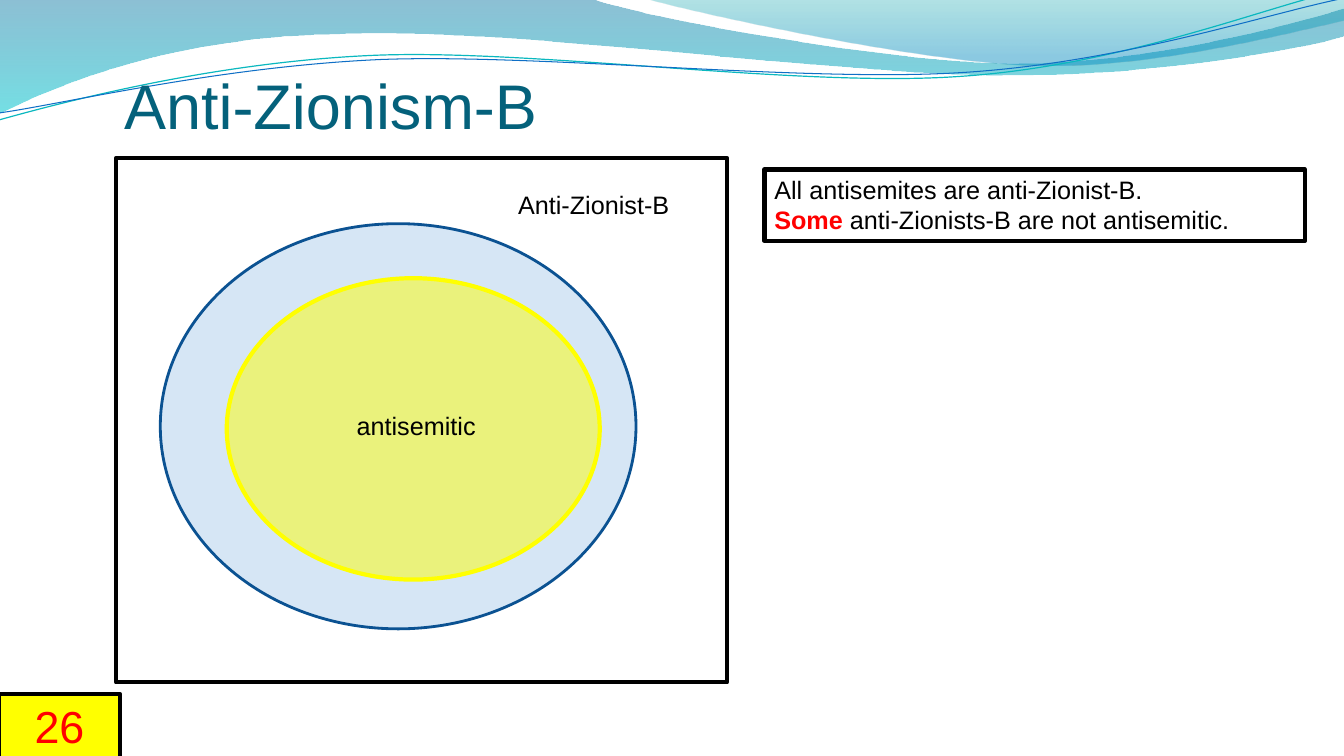
from itertools import islice
from math import cos, radians, sin
from lxml.etree import Element, SubElement
from pptx import Presentation
from pptx.dml.color import RGBColor
from pptx.enum.shapes import MSO_SHAPE as Preset
from pptx.enum.text import MSO_ANCHOR as Anchor, MSO_AUTO_SIZE as AutoSize, PP_ALIGN as Align
from pptx.oxml.ns import qn
from pptx.util import Pt

COLORS = {
    "black": "000000", "red": "FF0000", "yellow": "FFFF00", "title": "04617B",
    "blue": "0F6FC6", "dark_blue": "0B5292", "teal": "0AB8BF",
    "wave_blue": "0074A1", "wave_cyan": "00C6CF",
    "crest_teal": "00A1A9", "crest_blue": "008BBF",
}
STRAND_TILT = 2.7

WAVE = [
    [(0, 0)], [(422.6, -0.7)],
    [(456.5, 12.2), (637.2, 45.4), (727.9, 45.4)],
    [(819.4, 45.4), (920.2, 18.7), (959.8, 6.5)],
    [(961.2, 25.9)],
    [(943.9, 31.7), (835.2, 54.7), (715.7, 54)],
    [(596.9, 54), (366.5, 20.2), (247, 24.5)],
    [(123.8, 25.9), (43.9, 59.8), (-0.7, 81.4)],
    [(0, 0)],
]
CREST = [
    [(460.1, -0.7)],
    [(488.9, 7.9), (654.5, 44.6), (738, 46.8)],
    [(821.5, 49.7), (923, 23), (959.8, 15.1)],
    [(959.8, 0)],
    [(460.1, -0.7)],
]
TEAL_STRAND = [
    [(-0.7, 85.7)],
    [(46.1, 72.7), (151.9, 44.6), (265.7, 39.6)],
    [(379.4, 34.6), (568.8, 62.6), (684, 54.7)],
    [(799.2, 47.5), (901.4, 5.8), (958.3, -7.2)],
]
BLUE_STRAND = [
    [(0, 80.6)],
    [(45.4, 74.2), (157, 47.5), (272.2, 42.5)],
    [(386.6, 38.2), (573.1, 59), (687.6, 51.8)],
    [(802.8, 44.6), (903.6, 10.1), (960.5, -1.4)],
]


def rgb(name):
    return RGBColor.from_string(COLORS[name])


def set_attributes(target, values):
    for name, value in values.items():
        setattr(target, name, value)


def set_opacity(shape, percents):
    colors = list(shape.element.spPr.iter(qn("a:srgbClr")))
    for color, percent in zip(colors, percents):
        SubElement(color, qn("a:alpha"), val=str(percent * 1000))


def set_line(shape, color, width):
    shape.line.color.rgb = rgb(color)
    shape.line.width = Pt(width)


def turn(point, center, degrees):
    x, y = point[0] - center[0], point[1] - center[1]
    cosine, sine = cos(radians(degrees)), sin(radians(degrees))
    return center[0] + x * cosine - y * sine, center[1] + x * sine + y * cosine


def bend_curves(shape, segments):
    outline = next(shape.element.spPr.iter(qn("a:path")))
    lines = iter(outline.findall(qn("a:lnTo")))
    for segment in segments[1:]:
        pieces = list(islice(lines, len(segment)))
        if len(segment) == 3:
            curve = Element(qn("a:cubicBezTo"))
            pieces[0].addprevious(curve)
            for piece in pieces:
                curve.append(piece[0])
                outline.remove(piece)


def add_outline(slide, segments, close):
    start, *rest = [(Pt(x), Pt(y)) for segment in segments for x, y in segment]
    builder = slide.shapes.build_freeform(*start)
    builder.add_line_segments(rest, close=close)
    shape = builder.convert_to_shape()
    shape.shadow.inherit = False
    bend_curves(shape, segments)
    return shape


def add_wave(slide, segments, stops):
    shape = add_outline(slide, segments, True)
    shape.fill.gradient()
    shape.fill.gradient_angle = 270
    for stop, (position, color, _) in zip(shape.fill.gradient_stops, stops):
        stop.position = position
        stop.color.rgb = rgb(color)
    set_opacity(shape, [opacity for _, _, opacity in stops])
    shape.line.fill.background()


def add_strand(slide, segments, center, color, width):
    level = [[turn(point, center, STRAND_TILT) for point in segment] for segment in segments]
    shape = add_outline(slide, level, False)
    shape.rotation = 360 - STRAND_TILT
    shape.fill.background()
    set_line(shape, color, width)


def add_figure(slide, preset, box, line, width, fill=None, opacity=100):
    shape = slide.shapes.add_shape(preset, *map(Pt, box))
    shape.shadow.inherit = False
    if fill:
        shape.fill.solid()
        shape.fill.fore_color.rgb = rgb(fill)
        if opacity < 100:
            set_opacity(shape, [opacity])
    else:
        shape.fill.background()
    set_line(shape, line, width)
    return shape


def write(shape, paragraphs, size, align=Align.LEFT, **frame_values):
    frame = shape.text_frame
    set_attributes(frame, {"word_wrap": True, "vertical_anchor": Anchor.TOP,
                           "auto_size": AutoSize.SHAPE_TO_FIT_TEXT, **frame_values})
    for index, runs in enumerate(paragraphs):
        paragraph = frame.add_paragraph() if index else frame.paragraphs[0]
        paragraph.alignment = align
        for text, color, bold in runs:
            run = paragraph.add_run()
            run.text = text
            set_attributes(run.font, {"name": "Arial", "size": Pt(size), "bold": bold})
            run.font.color.rgb = rgb(color)


def add_label(slide, text, box):
    write(slide.shapes.add_textbox(*map(Pt, box)), [[(text, "black", False)]], 18)


def add_title(slide, text):
    title = slide.shapes.title
    title.element.getparent().append(title.element)
    set_attributes(title, {"left": Pt(88.6), "top": Pt(44.6), "width": Pt(616.3), "height": Pt(56.9)})
    write(title, [[(text, "title", False)]], 45, vertical_anchor=Anchor.BOTTOM,
          auto_size=AutoSize.NONE, margin_left=0, margin_right=0,
          margin_top=Pt(3.6), margin_bottom=0)


def main():
    presentation = Presentation()
    set_attributes(presentation, {"slide_width": Pt(960), "slide_height": Pt(540)})
    slide = presentation.slides.add_slide(presentation.slide_layouts[5])

    add_wave(slide, WAVE, [(0, "wave_blue", 45), (1, "wave_cyan", 55)])
    add_wave(slide, CREST, [(0, "crest_teal", 30), (0.8, "crest_blue", 45)])
    add_strand(slide, TEAL_STRAND, (478.8, 41.4), "teal", 0.85)
    add_strand(slide, BLUE_STRAND, (480.2, 42.5), "blue", 0.75)

    circle = Preset.FLOWCHART_CONNECTOR
    add_figure(slide, circle, (114.5, 159.8, 339.8, 289.4), "dark_blue", 2, "blue", 17)
    add_title(slide, "Anti-Zionism-B")
    add_figure(slide, Preset.RECTANGLE, (82.8, 113, 436.6, 374.4), "black", 3)
    add_figure(slide, circle, (162, 198.7, 266.4, 215.3), "yellow", 3, "yellow", 49)
    add_label(slide, "antisemitic", (247.7, 289.8, 108, 28.8))
    add_label(slide, "Anti-Zionist-B", (363, 131.8, 132.5, 28.8))

    summary = add_figure(slide, Preset.RECTANGLE, (546, 121, 386, 51.1), "black", 3)
    write(summary, [
        [("All antisemites are anti-Zionist-B.", "black", False)],
        [("Some", "red", True), (" anti-Zionists-B are not antisemitic.", "black", False)],
    ], 18)
    page = add_figure(slide, Preset.RECTANGLE, (-0.7, 495.6, 86.4, 46.1), "black", 3, "yellow")
    write(page, [[("26", "red", False)]], 32, Align.CENTER)

    presentation.save("out.pptx")


if __name__ == "__main__":
    main()
